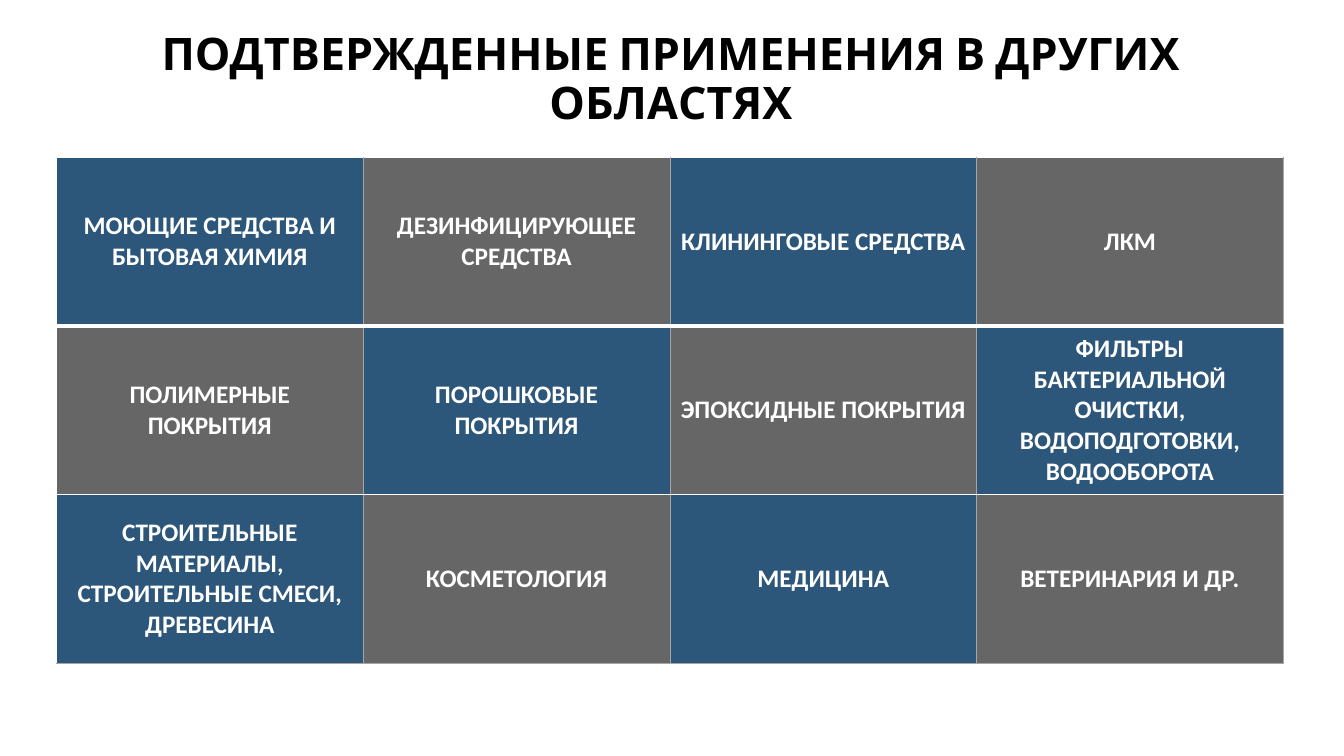
from lxml import etree
from pptx import Presentation
from pptx.dml.color import RGBColor
from pptx.enum.text import MSO_ANCHOR, PP_ALIGN
from pptx.oxml.ns import qn
from pptx.util import Inches, Pt

CENTER = PP_ALIGN.CENTER
MIDDLE = MSO_ANCHOR.MIDDLE
BOTTOM = MSO_ANCHOR.BOTTOM

BLACK = RGBColor(0x00, 0x00, 0x00)
WHITE = RGBColor(0xFF, 0xFF, 0xFF)
BLUE = RGBColor(0x2C, 0x56, 0x7A)
GRAY = RGBColor(0x66, 0x66, 0x66)
LIGHT_GRAY = RGBColor(0xA6, 0xA6, 0xA6)

THIN_GRAY = (LIGHT_GRAY, 0.5)
THIN_WHITE = (WHITE, 1)
THICK_WHITE = (WHITE, 3)

APPLICATIONS = [
    ["МОЮЩИЕ СРЕДСТВА И БЫТОВАЯ ХИМИЯ", "ДЕЗИНФИЦИРУЮЩЕЕ СРЕДСТВА",
     "КЛИНИНГОВЫЕ СРЕДСТВА", "ЛКМ"],
    ["ПОЛИМЕРНЫЕ ПОКРЫТИЯ", "ПОРОШКОВЫЕ ПОКРЫТИЯ", "ЭПОКСИДНЫЕ ПОКРЫТИЯ",
     "ФИЛЬТРЫ БАКТЕРИАЛЬНОЙ ОЧИСТКИ, ВОДОПОДГОТОВКИ, ВОДООБОРОТА"],
    ["СТРОИТЕЛЬНЫЕ МАТЕРИАЛЫ, СТРОИТЕЛЬНЫЕ СМЕСИ, ДРЕВЕСИНА",
     "КОСМЕТОЛОГИЯ", "МЕДИЦИНА", "ВЕТЕРИНАРИЯ И ДР."],
]
BOTTOM_BORDERS = [THICK_WHITE, THIN_WHITE, THIN_GRAY]


def add_centered_run(text_frame, text, font_name, size, color):
    paragraph = text_frame.paragraphs[0]
    paragraph.alignment = CENTER
    run = paragraph.add_run()
    run.text = text
    run.font.name = font_name
    run.font.size = Pt(size)
    run.font.bold = True
    run.font.color.rgb = color
    return paragraph


def set_borders(cell, left, right, top, bottom):
    properties = cell._tc.get_or_add_tcPr()
    sides = zip(("a:lnL", "a:lnR", "a:lnT", "a:lnB"), (left, right, top, bottom))
    for index, (tag, (color, width)) in enumerate(sides):
        line = etree.Element(qn(tag), w=str(Pt(width)))
        fill = etree.SubElement(line, qn("a:solidFill"))
        etree.SubElement(fill, qn("a:srgbClr"), val=str(color))
        properties.insert(index, line)


presentation = Presentation()
presentation.slide_width = Inches(13.33)
presentation.slide_height = Inches(7.5)
slide = presentation.slides.add_slide(presentation.slide_layouts[6])

# Title
title = slide.shapes.add_textbox(Inches(0.56), Inches(0.27), Inches(12.19), Inches(1.01))
title_frame = title.text_frame
title_frame.word_wrap = True
title_frame.vertical_anchor = BOTTOM
title_frame.margin_left = title_frame.margin_right = 0
title_frame.margin_top = title_frame.margin_bottom = 0
title_paragraph = add_centered_run(
    title_frame, "ПОДТВЕРЖДЕННЫЕ ПРИМЕНЕНИЯ В ДРУГИХ ОБЛАСТЯХ", "Cabin", 32, BLACK)
title_paragraph.line_spacing = 0.9

# Checkerboard table of applications
table = slide.shapes.add_table(
    len(APPLICATIONS), len(APPLICATIONS[0]),
    Inches(0.56), Inches(1.56), Inches(12.17), Inches(5.02)).table
for column in table.columns:
    column.width = Inches(12.17 / 4)
for row in table.rows:
    row.height = Inches(5.02 / 3)

for row_index, names in enumerate(APPLICATIONS):
    for column_index, name in enumerate(names):
        cell = table.cell(row_index, column_index)
        cell.vertical_anchor = MIDDLE
        cell.fill.solid()
        cell.fill.fore_color.rgb = GRAY if (row_index + column_index) % 2 else BLUE
        add_centered_run(cell.text_frame, name, "Calibri", 18, WHITE)
        set_borders(
            cell,
            left=THIN_GRAY if column_index else THIN_WHITE,
            right=THIN_GRAY,
            top=BOTTOM_BORDERS[row_index - 1] if row_index else THIN_WHITE,
            bottom=BOTTOM_BORDERS[row_index])

presentation.save("out.pptx")
